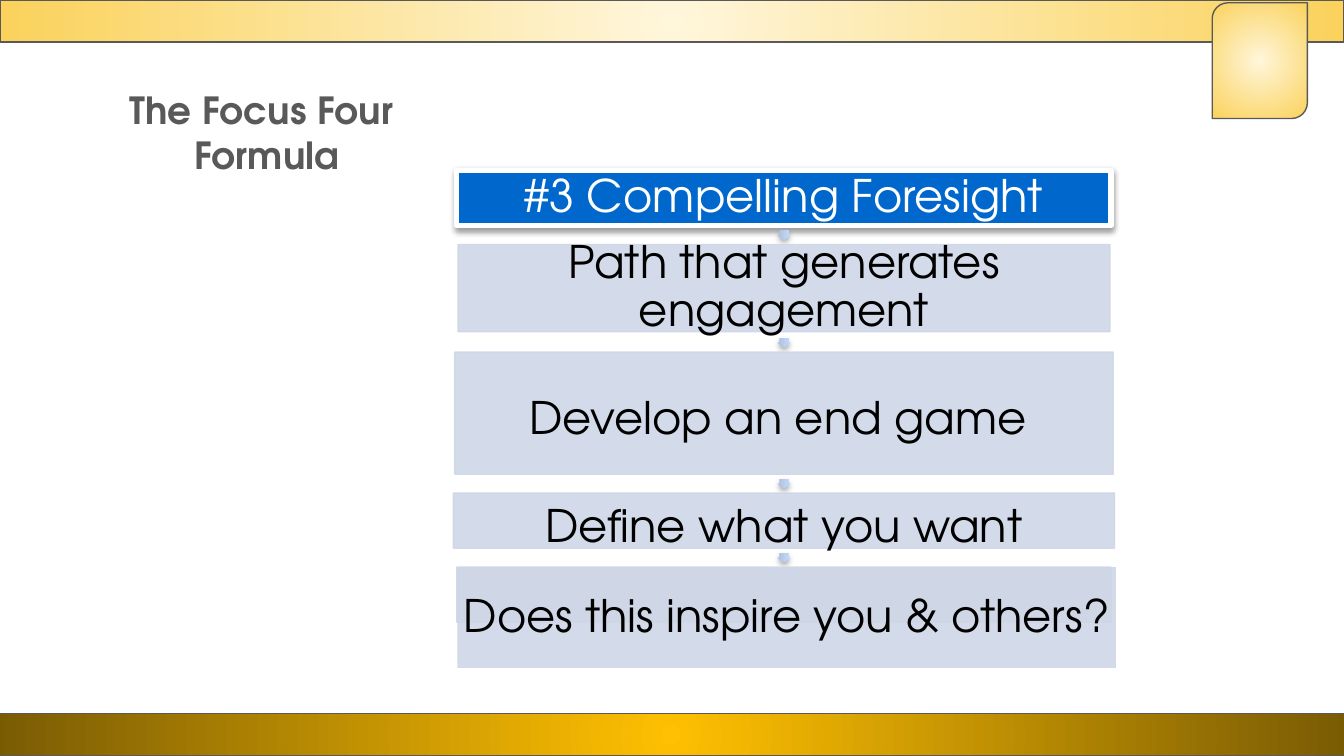
from lxml import etree
from pptx import Presentation
from pptx.dml.color import RGBColor
from pptx.enum.shapes import MSO_SHAPE
from pptx.enum.text import MSO_ANCHOR, MSO_AUTO_SIZE, PP_ALIGN
from pptx.oxml.ns import qn
from pptx.util import Pt

RECTANGLE = MSO_SHAPE.RECTANGLE
TAB = MSO_SHAPE.ROUND_2_DIAG_RECTANGLE
ARROW = MSO_SHAPE.RIGHT_ARROW
MIDDLE, TOP = MSO_ANCHOR.MIDDLE, MSO_ANCHOR.TOP
CENTER = PP_ALIGN.CENTER
NO_AUTOFIT = MSO_AUTO_SIZE.NONE

FONT = "TeX Gyre Adventor"
GREY, BLUE, PALE, WHITE, BLACK = "595959", "0067CD", "CFD7E7", "FFFFFF", "000000"
LIGHT_GOLD, DARK_GOLD = ("FFF6DB", "FAD25C"), ("FFC002", "795B04")
ARROW_BLUES = ("ABBEDC", "C7DDFF")


def rgb(value):
    """Turn a hex string into a colour."""
    return RGBColor.from_string(value)


def add_shape(slide, kind, box):
    """Add a preset shape without shadow or outline."""
    shape = slide.shapes.add_shape(kind, *map(Pt, box))
    shape.shadow.inherit = False
    shape.line.fill.background()
    return shape


def set_outline(shape, color, width):
    """Give a shape a solid outline."""
    shape.line.color.rgb = rgb(color)
    shape.line.width = Pt(width)


def set_gradient(shape, colors, radial=False):
    """Fill a shape with two colours, upwards or from the centre."""
    shape.fill.gradient()
    for stop, color, position in zip(shape.fill.gradient_stops, colors, (0, 1)):
        stop.color.rgb = rgb(color)
        stop.position = position
    shape.fill.gradient_angle = 90
    if radial:
        gradient = shape._element.spPr.find(qn("a:gradFill"))
        gradient.remove(gradient.find(qn("a:lin")))
        circle = etree.SubElement(gradient, qn("a:path"), path="circle")
        etree.SubElement(circle, qn("a:fillToRect"), l="50000", t="50000", r="50000", b="50000")


def set_shadow(shape, opacity, distance):
    """Drop a soft black shadow straight below a shape."""
    effects = shape._element.spPr.find(qn("a:effectLst"))
    shadow = etree.SubElement(effects, qn("a:outerShdw"), blurRad=str(Pt(3.1)),
                              dist=str(Pt(distance)), dir="5400000", rotWithShape="0")
    black = etree.SubElement(shadow, qn("a:srgbClr"), val=BLACK)
    etree.SubElement(black, qn("a:alpha"), val=str(opacity * 1000))


def make_translucent(shape):
    """Set every solid colour of a shape to 90% opacity."""
    for color in shape._element.spPr.iter(qn("a:srgbClr")):
        etree.SubElement(color, qn("a:alpha"), val="90000")


def add_gold(slide, kind, box, colors):
    """Add one outlined gold decoration."""
    shape = add_shape(slide, kind, box)
    set_gradient(shape, colors, radial=True)
    set_outline(shape, GREY, 0.75)


def add_title(slide, box, lines):
    """Place the slide title, one paragraph per line."""
    title = slide.shapes.title
    title.left, title.top, title.width, title.height = map(Pt, box)
    frame = title.text_frame
    frame.text = "\n".join(lines)
    frame.auto_size = NO_AUTOFIT
    frame.vertical_anchor = TOP
    for paragraph in frame.paragraphs:
        paragraph.alignment = CENTER
        font = paragraph.font
        font.name, font.size, font.bold = FONT, Pt(20), True
        font.color.rgb = rgb(GREY)


def write_label(holder, text, color):
    """Write a centred step label into a shape or text box."""
    frame = holder.text_frame
    frame.word_wrap = True
    frame.vertical_anchor = MIDDLE
    frame.margin_left = frame.margin_right = frame.margin_top = frame.margin_bottom = Pt(2.2)
    paragraph = frame.paragraphs[0]
    paragraph.text = text
    paragraph.alignment = CENTER
    paragraph.line_spacing = 0.9
    paragraph.font.name, paragraph.font.size = FONT, Pt(24)
    paragraph.font.color.rgb = rgb(color)


def add_heading(slide, box, text):
    """Add the blue heading at the top of the chain."""
    heading = add_shape(slide, RECTANGLE, box)
    heading.fill.solid()
    heading.fill.fore_color.rgb = rgb(BLUE)
    set_outline(heading, WHITE, 3)
    set_shadow(heading, 38, 1.6)
    write_label(heading, text, WHITE)


def add_panel(slide, box, outlined=True):
    """Add a pale, slightly transparent panel."""
    panel = add_shape(slide, RECTANGLE, box)
    panel.fill.solid()
    panel.fill.fore_color.rgb = rgb(PALE)
    if outlined:
        set_outline(panel, PALE, 0.75)
    make_translucent(panel)
    return panel


def add_arrow(slide, center_x, top):
    """Add a small arrow pointing down to the next step."""
    arrow = add_shape(slide, ARROW, (center_x - 2.5, top, 5, 7.2))
    arrow.rotation = 90
    arrow.adjustments[0], arrow.adjustments[1] = 0.667, 0.5
    set_gradient(arrow, ARROW_BLUES)
    set_shadow(arrow, 35, 1.8)


def add_chain(slide, box):
    """Stack the heading and its four steps, centred in the given box."""
    left, top, width, _ = box
    center_x = left + width / 2

    def centered(step_top, step_width, height):
        return center_x - step_width / 2, top + step_top, step_width, height

    add_heading(slide, centered(0, 350.6, 29.5), "#3 Compelling Foresight")
    steps = [
        ("Path that generates engagement", 39.6, 349.2, 46.8, 0, 46.8),
        ("Develop an end game ", 97.2, 352.8, 65.5, 13, 46.8),
        ("Define what you want", 172.8, 354.2, 29.5, 0, 37.4),
    ]
    for text, step_top, step_width, height, shift, label_height in steps:
        add_arrow(slide, center_x, top + step_top - 8.6)
        add_panel(slide, centered(step_top, step_width, height))
        label_box = centered(step_top + shift, step_width, label_height)
        write_label(slide.shapes.add_textbox(*map(Pt, label_box)), text, BLACK)

    last_top = 212.4
    add_arrow(slide, center_x, top + last_top - 8.6)
    add_panel(slide, centered(last_top, 350.6, 29.5))
    question = add_panel(slide, (left + 2.2, top + last_top, 352.8, 54), outlined=False)
    write_label(question, "Does this inspire you & others?", BLACK)


def main():
    """Build and save the slide."""
    deck = Presentation()
    deck.slide_width, deck.slide_height = Pt(720), Pt(405)
    slide = deck.slides.add_slide(deck.slide_layouts[5])
    add_gold(slide, RECTANGLE, (0, 0, 720, 22.5), LIGHT_GOLD)
    add_gold(slide, RECTANGLE, (-2.9, 382.3, 725, 22.5), DARK_GOLD)
    add_gold(slide, TAB, (649.4, 1.5, 51, 62), LIGHT_GOLD)
    add_chain(slide, (242.9, 91.4, 354.2, 266.4))
    add_title(slide, (36, 43.2, 213.8, 92.2), ["The Focus Four ", "Formula"])
    deck.save("out.pptx")


if __name__ == "__main__":
    main()
